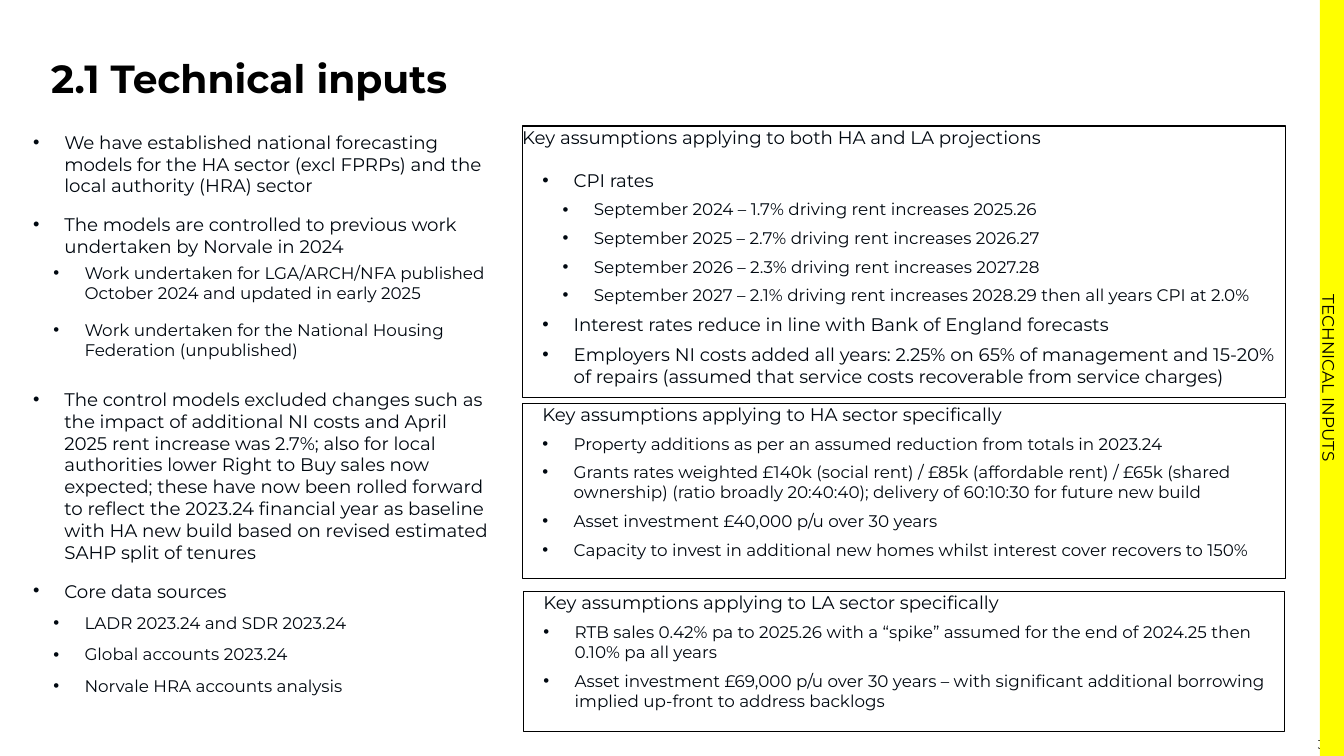
from dataclasses import dataclass

from lxml import etree
from pptx import Presentation
from pptx.dml.color import RGBColor
from pptx.enum.shapes import MSO_SHAPE
from pptx.enum.text import MSO_ANCHOR, PP_ALIGN
from pptx.oxml.ns import qn
from pptx.util import Inches, Pt

RECTANGLE = MSO_SHAPE.RECTANGLE
TOP, MIDDLE = MSO_ANCHOR.TOP, MSO_ANCHOR.MIDDLE
LEFT, CENTER, RIGHT = PP_ALIGN.LEFT, PP_ALIGN.CENTER, PP_ALIGN.RIGHT


@dataclass(frozen=True)
class Theme:
    font: str = "Montserrat"
    black: str = "000000"
    ink: str = "000810"
    white: str = "FFFFFF"
    yellow: str = "FFFF00"
    title: int = 28
    main: int = 13
    detail: int = 12
    number: int = 9
    outline: float = 0.75


THEME = Theme()
HANG = 0.31
STEP = 0.2

STYLES = {
    "point": dict(size=THEME.main, indent=HANG, bullet=True, before=8, after=4),
    "work": dict(size=THEME.detail, indent=HANG + STEP, bullet=True, after=12, level=1),
    "source": dict(size=THEME.detail, indent=HANG + STEP, bullet=True, before=4, after=4, level=1),
    "lead": dict(size=THEME.main, after=12),
    "heading": dict(size=THEME.main, indent=STEP, before=3, after=3, level=1),
    "topic": dict(size=THEME.main, indent=HANG + STEP, bullet=True, before=3, after=3, level=1),
    "item": dict(size=THEME.detail, indent=HANG + STEP, bullet=True, before=3, after=3, level=1),
    "rate": dict(size=THEME.detail, indent=HANG + 2 * STEP, bullet=True, before=3, after=3, level=2),
}

TITLE = "2.1 Technical inputs"
SECTION = "TECHNICAL INPUTS"
PAGE_NUMBER = "3"

MODELS = [
    ("point", "We have established national forecasting models for the HA sector (excl FPRPs) and the local authority (HRA) sector"),
    ("point", "The models are controlled to previous work undertaken by Norvale in 2024"),
    ("work", "Work undertaken for LGA/ARCH/NFA published October 2024 and updated in early 2025"),
    ("work", "Work undertaken for the National Housing Federation (unpublished)"),
    ("point", "The control models excluded changes such as the impact of additional NI costs and April 2025 rent increase was 2.7%; "
              "also for local authorities lower Right to Buy sales now expected; these have now been rolled forward to reflect "
              "the 2023.24 financial year as baseline with HA new build based on revised estimated SAHP split of tenures"),
    ("point", "Core data sources"),
    ("source", "LADR 2023.24 and SDR 2023.24"),
    ("source", "Global accounts 2023.24"),
    ("source", "Norvale HRA accounts analysis"),
]

PANELS = [
    ((5.18, 1.25, 7.57, 2.69), [
        ("lead", "Key assumptions applying to both HA and LA projections"),
        ("topic", "CPI rates"),
        ("rate", "September 2024 – 1.7% driving rent increases 2025.26"),
        ("rate", "September 2025 – 2.7% driving rent increases 2026.27"),
        ("rate", "September 2026 – 2.3% driving rent increases 2027.28"),
        ("rate", "September 2027 – 2.1% driving rent increases 2028.29 then all years CPI at 2.0%"),
        ("topic", "Interest rates reduce in line with Bank of England forecasts"),
        ("topic", "Employers NI costs added all years: 2.25% on 65% of management and 15-20% of repairs "
                  "(assumed that service costs recoverable from service charges)"),
    ]),
    ((5.18, 4, 7.57, 1.74), [
        ("heading", "Key assumptions applying to HA sector specifically"),
        ("item", "Property additions as per an assumed reduction from totals in 2023.24"),
        ("item", "Grants rates weighted £140k (social rent) / £85k (affordable rent) / £65k (shared ownership) "
                 "(ratio broadly 20:40:40); delivery of 60:10:30 for future new build"),
        ("item", "Asset investment £40,000 p/u over 30 years"),
        ("item", "Capacity to invest in additional new homes whilst interest cover recovers to 150%"),
    ]),
    ((5.19, 5.87, 7.55, 1.39), [
        ("heading", "Key assumptions applying to LA sector specifically"),
        ("item", "RTB sales 0.42% pa to 2025.26 with a “spike” assumed for the end of 2024.25 then 0.10% pa all years"),
        ("item", "Asset investment £69,000 p/u over 30 years – with significant additional borrowing "
                 "implied up-front to address backlogs"),
    ]),
]


def color(value):
    return RGBColor.from_string(value)


def write(frame, text, size, ink=THEME.ink, bold=False, align=LEFT, indent=0,
          bullet=False, before=0, after=0, level=0, spacing=None):
    first = not frame.text
    para = frame.paragraphs[0] if first else frame.add_paragraph()
    para.level = level
    para.alignment = align
    properties = para._p.get_or_add_pPr()
    properties.set("marL", str(Inches(indent)))
    properties.set("indent", str(-Inches(HANG) if bullet else 0))
    if bullet:
        etree.SubElement(properties, qn("a:buFont"), typeface="Arial")
        etree.SubElement(properties, qn("a:buChar"), char="•")
    else:
        etree.SubElement(properties, qn("a:buNone"))
    para.space_before = Pt(0 if first else before)
    para.space_after = Pt(after)
    if spacing:
        para.line_spacing = spacing
    span = para.add_run()
    span.text = text
    span.font.name = THEME.font
    span.font.size = Pt(size)
    span.font.bold = bold
    span.font.color.rgb = color(ink)


def prepare(frame, margins=(0.1, 0.05), anchor=TOP):
    frame.word_wrap = True
    frame.vertical_anchor = anchor
    frame.margin_left = frame.margin_right = Inches(margins[0])
    frame.margin_top = frame.margin_bottom = Inches(margins[1])
    return frame


def add_text(page, place, **layout):
    box = page.shapes.add_textbox(*map(Inches, place))
    return prepare(box.text_frame, **layout)


def add_rectangle(page, place, fill, line=None):
    box = page.shapes.add_shape(RECTANGLE, *map(Inches, place))
    box.shadow.inherit = False
    box.fill.solid()
    box.fill.fore_color.rgb = color(fill)
    if line:
        box.line.color.rgb = color(line)
        box.line.width = Pt(THEME.outline)
    else:
        box.line.fill.background()
    return box


def write_list(frame, rows):
    for style, text in rows:
        write(frame, text, **STYLES[style])


def main():
    deck = Presentation()
    deck.slide_width, deck.slide_height = Inches(13.33), Inches(7.5)
    page = deck.slides.add_slide(deck.slide_layouts[6])

    write(add_text(page, (0.41, 0.54, 11.89, 0.42)), TITLE,
          size=THEME.title, ink=THEME.black, bold=True, spacing=0.9)
    write(add_text(page, (12.73, 7.27, 0.51, 0.23), anchor=MIDDLE), PAGE_NUMBER,
          size=THEME.number, ink=THEME.black, align=RIGHT)
    write_list(add_text(page, (0.23, 1.25, 4.75, 5.71)), MODELS)

    band = add_rectangle(page, (9.46, 3.63, 7.5, 0.24), THEME.yellow)
    band.rotation = 90
    write(prepare(band.text_frame), SECTION,
          size=THEME.detail, ink=THEME.black, align=CENTER, after=12)

    for place, rows in PANELS:
        panel = add_rectangle(page, place, THEME.white, THEME.black)
        write_list(prepare(panel.text_frame, margins=(0, 0)), rows)

    deck.save("out.pptx")


if __name__ == "__main__":
    main()
